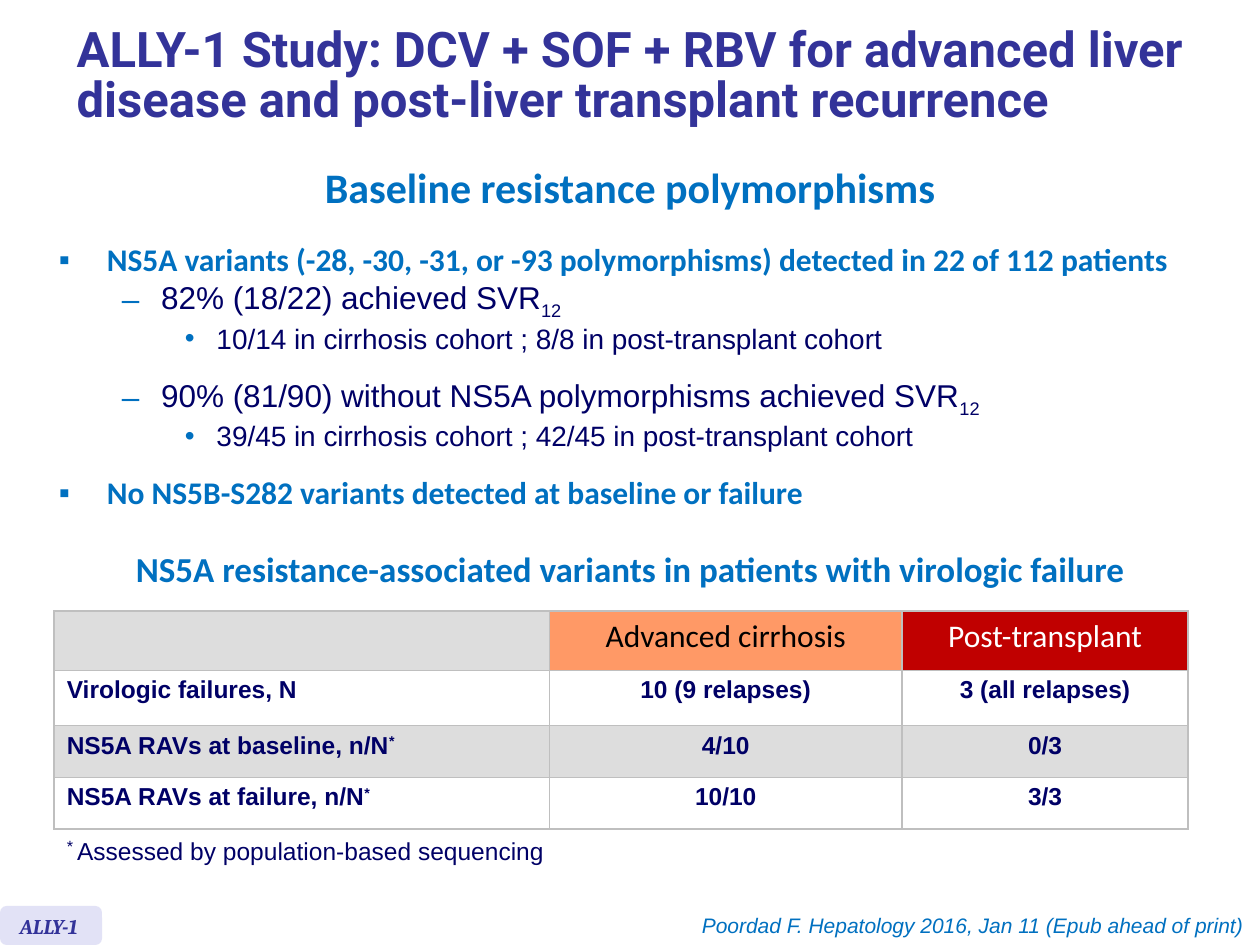
from lxml import etree
from pptx import Presentation
from pptx.dml.color import RGBColor
from pptx.enum.shapes import MSO_SHAPE as SHAPE
from pptx.enum.text import MSO_ANCHOR as ANCHOR, PP_ALIGN as ALIGN
from pptx.oxml.ns import qn
from pptx.util import Inches, Pt

WIDTH, HEIGHT = Inches(10), Inches(7.5)

BLUE = RGBColor(0x00, 0x70, 0xC0)
NAVY = RGBColor(0x00, 0x00, 0x66)
INDIGO = RGBColor(0x33, 0x33, 0x99)
LILAC = RGBColor(0xE2, 0xE2, 0xF6)
GREY = RGBColor(0xDD, 0xDD, 0xDD)
RULE = RGBColor(0xBF, 0xBF, 0xBF)
ORANGE = RGBColor(0xFF, 0x99, 0x66)
RED = RGBColor(0xC0, 0x00, 0x00)
BLACK = RGBColor(0x00, 0x00, 0x00)
WHITE = RGBColor(0xFF, 0xFF, 0xFF)

# Level: bullet, left indent, hanging indent (inches), space after (points)
LEVELS = [("▪", 0.38, 0.38, 0), ("–", 0.81, 0.31, 0), ("•", 1.25, 0.25, 12)]

# Level and runs; a run is its text and its baseline shift in percent
FINDINGS = [
    (0, [("NS5A variants (-28, -30, -31, or -93 polymorphisms) "
          "detected in 22 of 112 patients", 0)]),
    (1, [("82% (18/22) achieved SVR", 0), ("12", -25)]),
    (2, [("10/14 in cirrhosis cohort ; 8/8 in post-transplant cohort", 0)]),
    (1, [("90% (81/90) without NS5A polymorphisms achieved SVR", 0), ("12", -25)]),
    (2, [("39/45 in cirrhosis cohort ; 42/45 in post-transplant cohort", 0)]),
    (0, [("No NS5B-S282 variants detected at baseline or failure", 0)]),
]

HEADINGS = [("Advanced cirrhosis", ORANGE, BLACK), ("Post-transplant", RED, WHITE)]
RESULTS = [
    ([("Virologic failures, N", 0)], "10 (9 relapses)", "3 (all relapses)"),
    ([("NS5A RAVs at baseline, n/N", 0), ("*", 30)], "4/10", "0/3"),
    ([("NS5A RAVs at failure, n/N", 0), ("*", 30)], "10/10", "3/3"),
]


def share(left, top, width, height):
    """Turn percentages of the slide into a box."""
    return [int(v * side / 100) for v, side in
            zip((left, top, width, height), (WIDTH, HEIGHT) * 2)]


def add_run(p, text, size, font, color, bold=False, italic=False, shift=0):
    r = p.add_run()
    r.text = text
    r.font.size, r.font.name = Pt(size), font
    r.font.bold, r.font.italic = bold, italic
    r.font.color.rgb = color
    if shift:
        r._r.get_or_add_rPr().set("baseline", str(shift * 1000))


def add_text(shapes, box, text, size, font, color, align=ALIGN.LEFT, wrap=True, **style):
    tf = shapes.add_textbox(*share(*box)).text_frame
    tf.word_wrap = wrap
    p = tf.paragraphs[0]
    p.alignment = align
    add_run(p, text, size, font, color, **style)
    return tf


def set_bullet(p, level):
    char, left, hang, after = LEVELS[level]
    p.level = level
    p.space_before, p.space_after = Pt(0), Pt(after)
    pPr = p._p.get_or_add_pPr()
    pPr.set("marL", str(Inches(left)))
    pPr.set("indent", str(-Inches(hang)))
    clr = etree.SubElement(pPr, qn("a:buClr"))
    etree.SubElement(clr, qn("a:srgbClr"), val=str(BLUE))
    etree.SubElement(pPr, qn("a:buFont"), typeface="Arial")
    etree.SubElement(pPr, qn("a:buChar"), char=char)


def add_findings(s):
    tf = s.shapes.add_textbox(*share(3.7, 24.8, 93.6, 29.87)).text_frame
    tf.word_wrap = True
    for i, (level, runs) in enumerate(FINDINGS):
        p = tf.add_paragraph() if i else tf.paragraphs[0]
        set_bullet(p, level)
        font, color = ("Arial", NAVY) if level else ("Calibri", BLUE)
        for text, shift in runs:
            add_run(p, text, 16 if level == 2 else 18, font, color,
                    bold=level == 0, shift=shift)


def set_borders(cell, ruled="LRTB"):
    tcPr = cell._tc.get_or_add_tcPr()
    for side in "LRTB":
        ln = etree.SubElement(tcPr, qn(f"a:ln{side}"), w=str(Pt(1)))
        if side in ruled:
            fill = etree.SubElement(ln, qn("a:solidFill"))
            etree.SubElement(fill, qn("a:srgbClr"), val=str(RULE))
        else:
            etree.SubElement(ln, qn("a:noFill"))


def fill_cell(cell, fill, runs=(), align=ALIGN.CENTER, **style):
    set_borders(cell)
    cell.fill.solid()
    cell.fill.fore_color.rgb = fill
    p = cell.text_frame.paragraphs[0]
    p.alignment = align
    for text, shift in runs:
        add_run(p, text, shift=shift, **style)


def add_results(s):
    frame = s.shapes.add_table(5, 3, *share(4.3, 64.67, 90, 28.53))
    table = frame.table
    table.first_row = table.horz_banding = False
    for col, width in zip(table.columns, (3.93, 2.8, 2.27)):
        col.width = Inches(width)
    for row, height in zip(table.rows, (0.47, 0.44, 0.41, 0.41, 0.41)):
        row.height = Inches(height)

    # Heading row
    fill_cell(table.cell(0, 0), GREY)
    for c, (text, fill, color) in enumerate(HEADINGS, 1):
        fill_cell(table.cell(0, c), fill, [(text, 0)],
                  size=18, font="Calibri", color=color)

    # Result rows
    body = dict(size=14, font="Arial", color=NAVY, bold=True)
    for r, (label, *values) in enumerate(RESULTS, 1):
        fill = WHITE if r % 2 else GREY
        fill_cell(table.cell(r, 0), fill, label, ALIGN.LEFT, **body)
        for c, value in enumerate(values, 1):
            fill_cell(table.cell(r, c), fill, [(value, 0)], **body)

    # Footnote row across the table
    note = table.cell(4, 0)
    note.merge(table.cell(4, 2))
    for c in range(3):
        set_borders(table.cell(4, c), "T")
        table.cell(4, c).fill.background()
    p = note.text_frame.paragraphs[0]
    add_run(p, "*", 16, "Arial", NAVY, shift=30)
    add_run(p, " ", 14, "Arial", NAVY, shift=30)
    add_run(p, "Assessed by population-based sequencing", 14, "Arial", NAVY)


def add_badge(s):
    shapes = s.shapes.add_group_shape().shapes
    sp = shapes.add_shape(SHAPE.ROUNDED_RECTANGLE, *share(0, 95.87, 8.1, 4.13))
    sp.shadow.inherit = False
    sp.fill.solid()
    sp.fill.fore_color.rgb = LILAC
    sp.line.fill.background()
    add_text(shapes, (0.6, 96, 8.8, 4), "ALLY-1", 12, "Cambria", INDIGO,
             bold=True, italic=True)


def main():
    prs = Presentation()
    prs.slide_width, prs.slide_height = WIDTH, HEIGHT
    s = prs.slides.add_slide(prs.slide_layouts[6])

    add_findings(s)
    add_results(s)
    add_badge(s)

    # Title
    tf = add_text(s.shapes, (5.1, 1.07, 94.9, 14.27),
                  "ALLY-1 Study: DCV + SOF + RBV for advanced liver disease "
                  "and post-liver transplant recurrence",
                  28, "Roboto", INDIGO, bold=True)
    tf.vertical_anchor = ANCHOR.MIDDLE
    tf.paragraphs[0].line_spacing = 0.85

    # Section headings
    add_text(s.shapes, (9.8, 57.33, 81.1, 5.87),
             "NS5A resistance-associated variants in patients with virologic failure",
             20, "Calibri", BLUE, wrap=False, bold=True)
    add_text(s.shapes, (24.8, 16.4, 51, 6.67), "Baseline resistance polymorphisms",
             24, "Calibri", BLUE, wrap=False, bold=True)

    # Reference
    add_text(s.shapes, (53.9, 95.87, 45.8, 4),
             "Poordad F. Hepatology 2016, Jan 11 (Epub ahead of print)",
             12, "Arial", BLUE, ALIGN.RIGHT, italic=True)

    prs.save("out.pptx")


if __name__ == "__main__":
    main()
